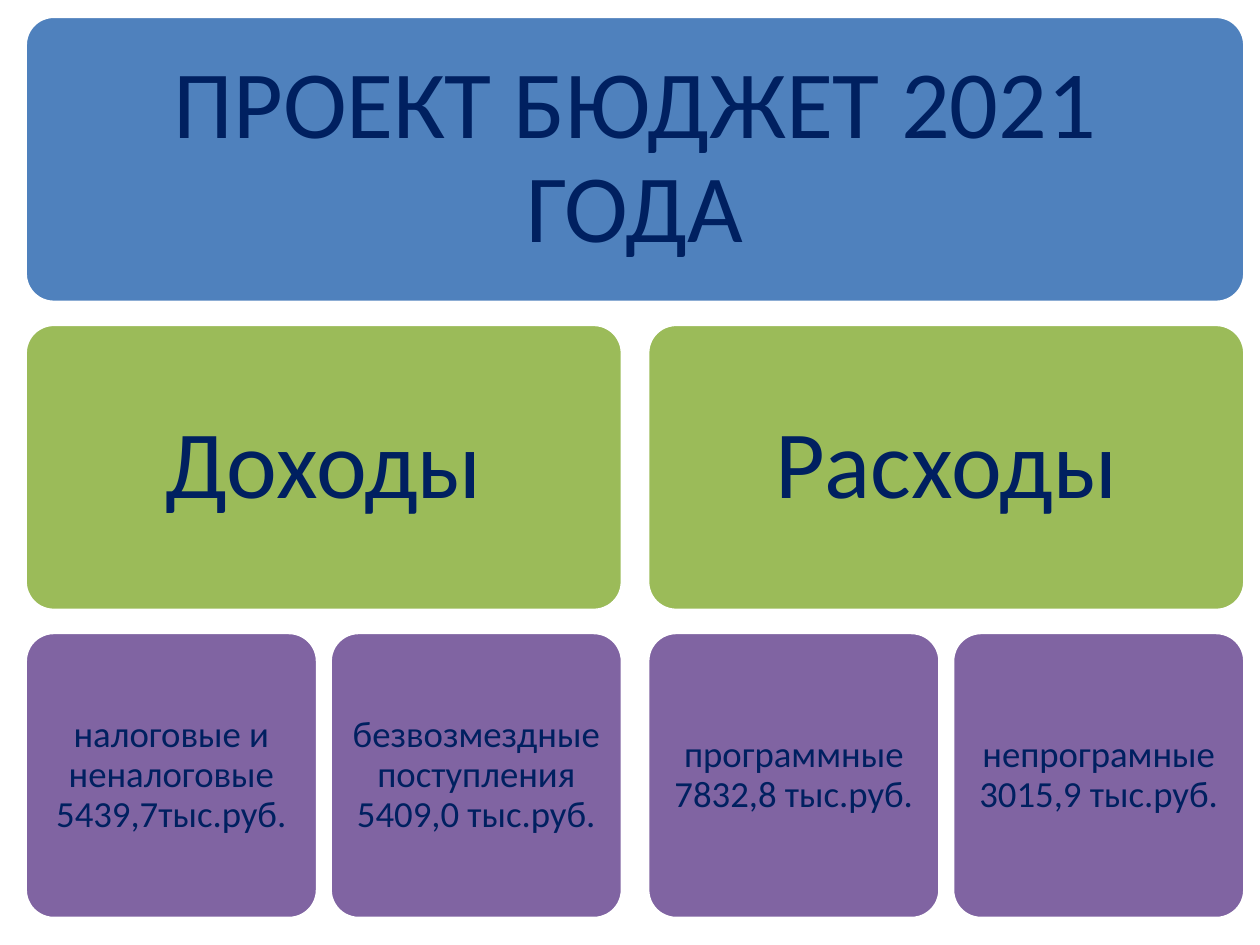
from dataclasses import dataclass

from pptx import Presentation
from pptx.dml.color import RGBColor
from pptx.enum.shapes import MSO_SHAPE
from pptx.enum.text import MSO_ANCHOR, PP_ALIGN
from pptx.util import Inches, Pt


@dataclass(frozen=True)
class Theme:
    font: str = "Calibri"
    text: str = "002060"
    line: str = "FFFFFF"
    fills: tuple = ("4F81BD", "9BBB59", "8064A2")
    sizes: tuple = (55, 55, 21)
    insets: tuple = (0.23, 0.23, 0.09)


@dataclass(frozen=True)
class Box:
    left: float
    top: float
    width: float
    height: float

    def split(self, count, gap):
        """Cut the box into equal columns with a gap between them."""
        width = (self.width - gap * (count - 1)) / count
        return [Box(self.left + i * (width + gap), self.top, width, self.height)
                for i in range(count)]


THEME = Theme()
AREA = Box(0.2, 0.13, 9.68, 7.16)
ROWS = 3
ROW_GAP = 0.175
COLUMN_GAPS = (0.2, 0.1)

BUDGET = ("ПРОЕКТ БЮДЖЕТ 2021 ГОДА", [
    ("Доходы", [
        ("налоговые и неналоговые 5439,7тыс.руб.", []),
        ("безвозмездные поступления 5409,0 тыс.руб.", []),
    ]),
    ("Расходы", [
        ("программные 7832,8 тыс.руб.", []),
        ("непрограмные 3015,9 тыс.руб.", []),
    ]),
])


def add_block(slide, box, text, level):
    sp = slide.shapes.add_shape(
        MSO_SHAPE.ROUNDED_RECTANGLE,
        *(Inches(v) for v in (box.left, box.top, box.width, box.height)))
    sp.adjustments[0] = 0.1
    sp.shadow.inherit = False
    sp.fill.solid()
    sp.fill.fore_color.rgb = RGBColor.from_string(THEME.fills[level])
    sp.line.color.rgb = RGBColor.from_string(THEME.line)
    sp.line.width = Pt(2)

    tf = sp.text_frame
    tf.word_wrap = True
    tf.vertical_anchor = MSO_ANCHOR.MIDDLE
    inset = Inches(THEME.insets[level])
    tf.margin_left = tf.margin_right = tf.margin_top = tf.margin_bottom = inset

    p = tf.paragraphs[0]
    p.alignment = PP_ALIGN.CENTER
    p.line_spacing = 0.9
    r = p.add_run()
    r.text = text
    r.font.name = THEME.font
    r.font.size = Pt(THEME.sizes[level])
    r.font.color.rgb = RGBColor.from_string(THEME.text)


def add_branch(slide, box, node, level=0):
    """Place a node in the top row of the box and its children below it."""
    text, children = node
    rows = ROWS - level
    height = (box.height - ROW_GAP * (rows - 1)) / rows
    add_block(slide, Box(box.left, box.top, box.width, height), text, level)
    if not children:
        return
    step = height + ROW_GAP
    below = Box(box.left, box.top + step, box.width, box.height - step)
    columns = below.split(len(children), COLUMN_GAPS[level])
    for column, child in zip(columns, children):
        add_branch(slide, column, child, level + 1)


def main():
    prs = Presentation()
    prs.slide_width, prs.slide_height = Inches(10), Inches(7.5)
    slide = prs.slides.add_slide(prs.slide_layouts[6])
    add_branch(slide, AREA, BUDGET)
    prs.save("out.pptx")


if __name__ == "__main__":
    main()
